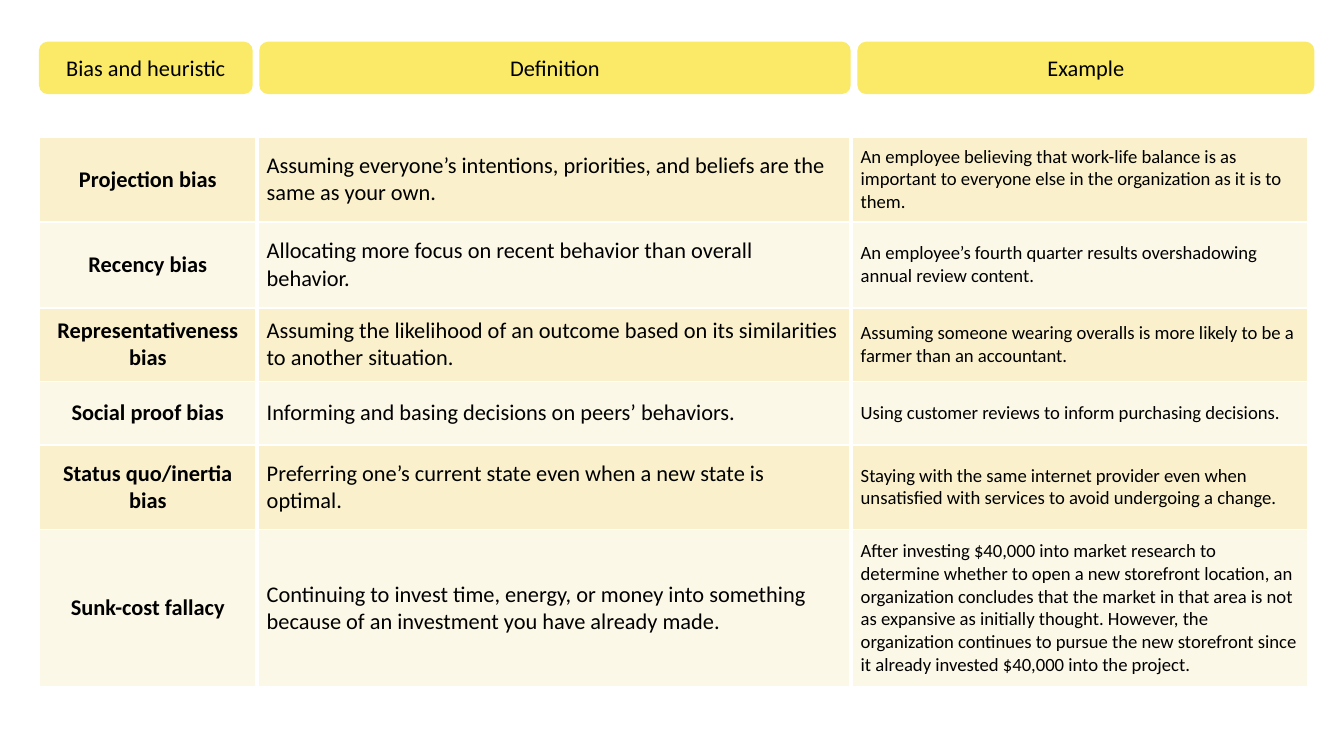
"""Build a slide with a table of biases, their definitions and examples."""
from lxml.etree import SubElement
from pptx import Presentation
from pptx.dml.color import RGBColor
from pptx.enum.shapes import MSO_SHAPE
from pptx.enum.text import MSO_ANCHOR, PP_ALIGN
from pptx.oxml.ns import qn
from pptx.util import Inches, Pt

FONT = "Calibri"
BLACK = RGBColor(0x00, 0x00, 0x00)
WHITE = RGBColor(0xFF, 0xFF, 0xFF)
YELLOW = RGBColor(0xFA, 0xEA, 0x68)
BANDS = (RGBColor(0xFA, 0xF1, 0xCC), RGBColor(0xFC, 0xF8, 0xE7))
SLIDE_WIDTH = 10
CELL_MARGIN = 0.15 / 2

HEADERS = [
    ("Bias and heuristic", 0.29, 1.59),
    ("Definition", 1.93, 4.4),
    ("Example", 6.38, 3.4),
]
ROWS = [
    (0.63, "Projection bias",
     "Assuming everyone’s intentions, priorities, and beliefs are the same as your own.",
     "An employee believing that work-life balance is as important to everyone else "
     "in the organization as it is to them."),
    (0.64, "Recency bias",
     "Allocating more focus on recent behavior than overall behavior.",
     "An employee’s fourth quarter results overshadowing annual review content."),
    (0.55, "Representativeness bias",
     "Assuming the likelihood of an outcome based on its similarities to another situation.",
     "Assuming someone wearing overalls is more likely to be a farmer than an accountant."),
    (0.47, "Social proof bias",
     "Informing and basing decisions on peers’ behaviors.",
     "Using customer reviews to inform purchasing decisions."),
    (0.63, "Status quo/inertia bias",
     "Preferring one’s current state even when a new state is optimal.",
     "Staying with the same internet provider even when unsatisfied with services "
     "to avoid undergoing a change."),
    (1.17, "Sunk-cost fallacy",
     "Continuing to invest time, energy, or money into something because of an "
     "investment you have already made.",
     "After investing $40,000 into market research to determine whether to open a new "
     "storefront location, an organization concludes that the market in that area is not "
     "as expansive as initially thought. However, the organization continues to pursue "
     "the new storefront since it already invested $40,000 into the project."),
]
COLUMNS = [
    (1.62, 12, True, PP_ALIGN.CENTER),
    (4.42, 12, False, PP_ALIGN.LEFT),
    (3.4, 10, False, PP_ALIGN.LEFT),
]


def write(text_frame, text, size, bold, alignment):
    paragraph = text_frame.paragraphs[0]
    paragraph.alignment = alignment
    run = paragraph.add_run()
    run.text = text
    run.font.name = FONT
    run.font.size = Pt(size)
    run.font.bold = bold
    run.font.color.rgb = BLACK


def set_borders(cell, left, right):
    properties = cell._tc.get_or_add_tcPr()
    widths = {"lnL": left, "lnR": right, "lnT": 1, "lnB": 1}
    for index, (side, width) in enumerate(widths.items()):
        line = SubElement(properties, qn(f"a:{side}"), w=str(Pt(width)))
        fill = SubElement(line, qn("a:solidFill"))
        SubElement(fill, qn("a:srgbClr"), val=str(WHITE))
        properties.insert(index, line)


def add_header(slide, text, left, width):
    shape = slide.shapes.add_shape(
        MSO_SHAPE.ROUNDED_RECTANGLE, Inches(left), Inches(0.31), Inches(width), Inches(0.39))
    shape.shadow.inherit = False
    shape.fill.solid()
    shape.fill.fore_color.rgb = YELLOW
    shape.line.fill.background()
    shape.text_frame.word_wrap = True
    shape.text_frame.vertical_anchor = MSO_ANCHOR.MIDDLE
    write(shape.text_frame, text, 12, False, PP_ALIGN.CENTER)


def add_bias_table(slide):
    width = sum(column[0] for column in COLUMNS)
    height = sum(row[0] for row in ROWS)
    table = slide.shapes.add_table(
        len(ROWS), len(COLUMNS), Inches(0.29), Inches(1.02), Inches(width), Inches(height)).table
    table.first_row = False
    last = len(COLUMNS) - 1
    for column, (column_width, *_) in zip(table.columns, COLUMNS):
        column.width = Inches(column_width)
    for r, (row_height, *texts) in enumerate(ROWS):
        table.rows[r].height = Inches(row_height)
        for c, (text, (_, size, bold, alignment)) in enumerate(zip(texts, COLUMNS)):
            cell = table.cell(r, c)
            cell.margin_left = cell.margin_right = Inches(CELL_MARGIN)
            cell.margin_top = cell.margin_bottom = Inches(CELL_MARGIN / 2)
            cell.vertical_anchor = MSO_ANCHOR.MIDDLE
            cell.fill.solid()
            cell.fill.fore_color.rgb = BANDS[r % 2]
            set_borders(cell, 2.25 if c > 0 else 1, 2.25 if c < last else 1)
            write(cell.text_frame, text, size, bold, alignment)


def main():
    presentation = Presentation()
    presentation.slide_width = Inches(SLIDE_WIDTH)
    presentation.slide_height = Inches(SLIDE_WIDTH * 9 / 16)
    slide = presentation.slides.add_slide(presentation.slide_layouts[6])
    add_bias_table(slide)
    for header in HEADERS:
        add_header(slide, *header)
    presentation.save("out.pptx")


if __name__ == "__main__":
    main()
